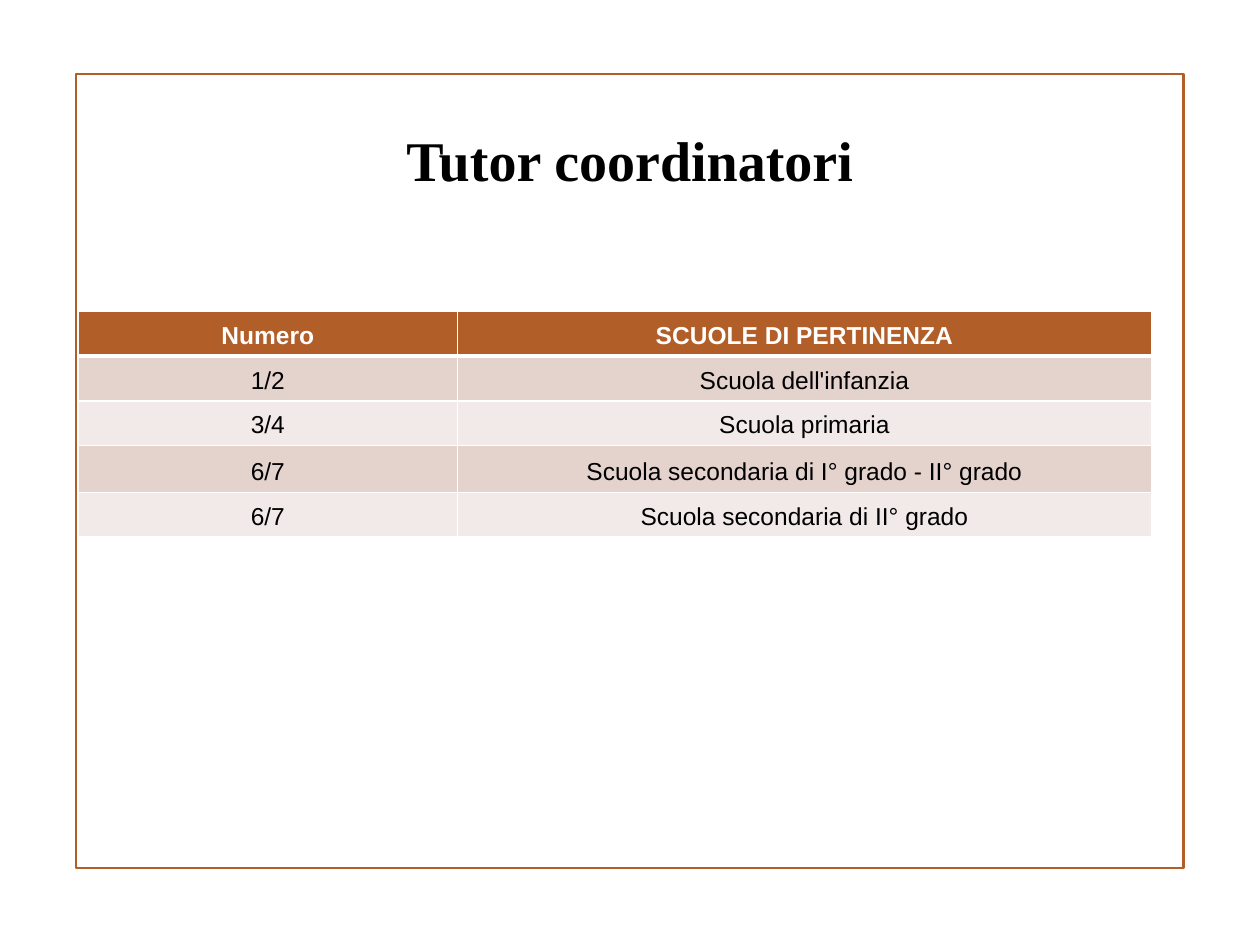
import pptx
import pptx.dml.color
import pptx.enum.shapes
import pptx.enum.text
import pptx.oxml
import pptx.oxml.ns
import pptx.util

Cm = pptx.util.Cm
Pt = pptx.util.Pt

COLOURS = {
    "accent": "B15E28",
    "band_dark": "E4D2CD",
    "band_light": "F2EAE8",
    "white": "FFFFFF",
    "black": "000000",
}
TITLE_FORMAT = {"name": "Times New Roman", "size": Pt(32), "bold": True}
HEADER_FORMAT = {"name": "Arial", "size": Pt(14), "bold": True}
BODY_FORMAT = {"name": "Arial", "size": Pt(14), "bold": False}
CELL_FORMAT = {
    "margin_left": Cm(0.03),
    "margin_right": Cm(0.03),
    "margin_top": Cm(0.03),
    "margin_bottom": Cm(0.13),
    "vertical_anchor": pptx.enum.text.MSO_ANCHOR.BOTTOM,
}

COLUMN_SHARES = [0.353, 0.647]
ROW_HEIGHTS = [0.9, 0.9, 0.9, 0.95, 0.9]
ROWS = [
    ["Numero", "SCUOLE DI PERTINENZA"],
    ["1/2", "Scuola dell'infanzia"],
    ["3/4", "Scuola primaria"],
    ["6/7", "Scuola secondaria di I° grado - II° grado"],
    ["6/7", "Scuola secondaria di II° grado"],
]


def colour(name):
    return pptx.dml.color.RGBColor.from_string(COLOURS[name])


def set_attributes(target, values):
    for name, value in values.items():
        setattr(target, name, value)


def write_centred(text_frame, text, font_format, colour_name):
    paragraph = text_frame.paragraphs[0]
    paragraph.alignment = pptx.enum.text.PP_ALIGN.CENTER
    run = paragraph.add_run()
    run.text = text
    set_attributes(run.font, font_format)
    run.font.color.rgb = colour(colour_name)


def set_borders(cell, widths):
    """Draw white borders; widths lists left, right, top, bottom in points."""
    properties = cell._tc.get_or_add_tcPr()
    for index, (side, width) in enumerate(zip("LRTB", widths)):
        properties.insert(index, pptx.oxml.parse_xml(
            f'<a:ln{side} {pptx.oxml.ns.nsdecls("a")} w="{Pt(width)}">'
            f'<a:solidFill><a:srgbClr val="{COLOURS["white"]}"/></a:solidFill>'
            f'</a:ln{side}>'))


def add_frame(slide, left, top, width, height):
    frame = slide.shapes.add_shape(
        pptx.enum.shapes.MSO_SHAPE.RECTANGLE,
        Cm(left), Cm(top), Cm(width), Cm(height))
    frame.shadow.inherit = False
    frame.fill.background()
    frame.line.color.rgb = colour("accent")
    frame.line.width = Pt(1.25)


def add_title(slide, left, top, width, height):
    title = slide.shapes.add_textbox(Cm(left), Cm(top), Cm(width), Cm(height))
    title.text_frame.word_wrap = True
    title.text_frame.auto_size = pptx.enum.text.MSO_AUTO_SIZE.SHAPE_TO_FIT_TEXT
    write_centred(title.text_frame, "Tutor coordinatori", TITLE_FORMAT, "black")


def add_tutor_table(slide, left, top, width):
    table = slide.shapes.add_table(
        len(ROWS), len(COLUMN_SHARES),
        Cm(left), Cm(top), Cm(width), Cm(sum(ROW_HEIGHTS))).table
    for column, share in zip(table.columns, COLUMN_SHARES):
        column.width = Cm(width * share)

    for row_index, texts in enumerate(ROWS):
        table.rows[row_index].height = Cm(ROW_HEIGHTS[row_index])
        is_header = row_index == 0
        band = "band_dark" if row_index % 2 else "band_light"
        for column_index, text in enumerate(texts):
            cell = table.cell(row_index, column_index)
            set_attributes(cell, CELL_FORMAT)
            cell.fill.solid()
            cell.fill.fore_color.rgb = colour("accent" if is_header else band)
            write_centred(cell.text_frame, text,
                          HEADER_FORMAT if is_header else BODY_FORMAT,
                          "white" if is_header else "black")
            # A thicker line parts the header from the body
            set_borders(cell, [1, 1, 3 if row_index == 1 else 1,
                               3 if is_header else 1])


def main():
    presentation = pptx.Presentation()
    presentation.slide_width = Cm(25.4)
    presentation.slide_height = Cm(19.05)
    slide = presentation.slides.add_slide(presentation.slide_layouts[6])
    add_frame(slide, 1.54, 1.5, 22.32, 16)
    add_title(slide, 7, 2.41, 11.4, 1.63)
    add_tutor_table(slide, 1.58, 6.28, 21.64)
    presentation.save("out.pptx")


if __name__ == "__main__":
    main()
